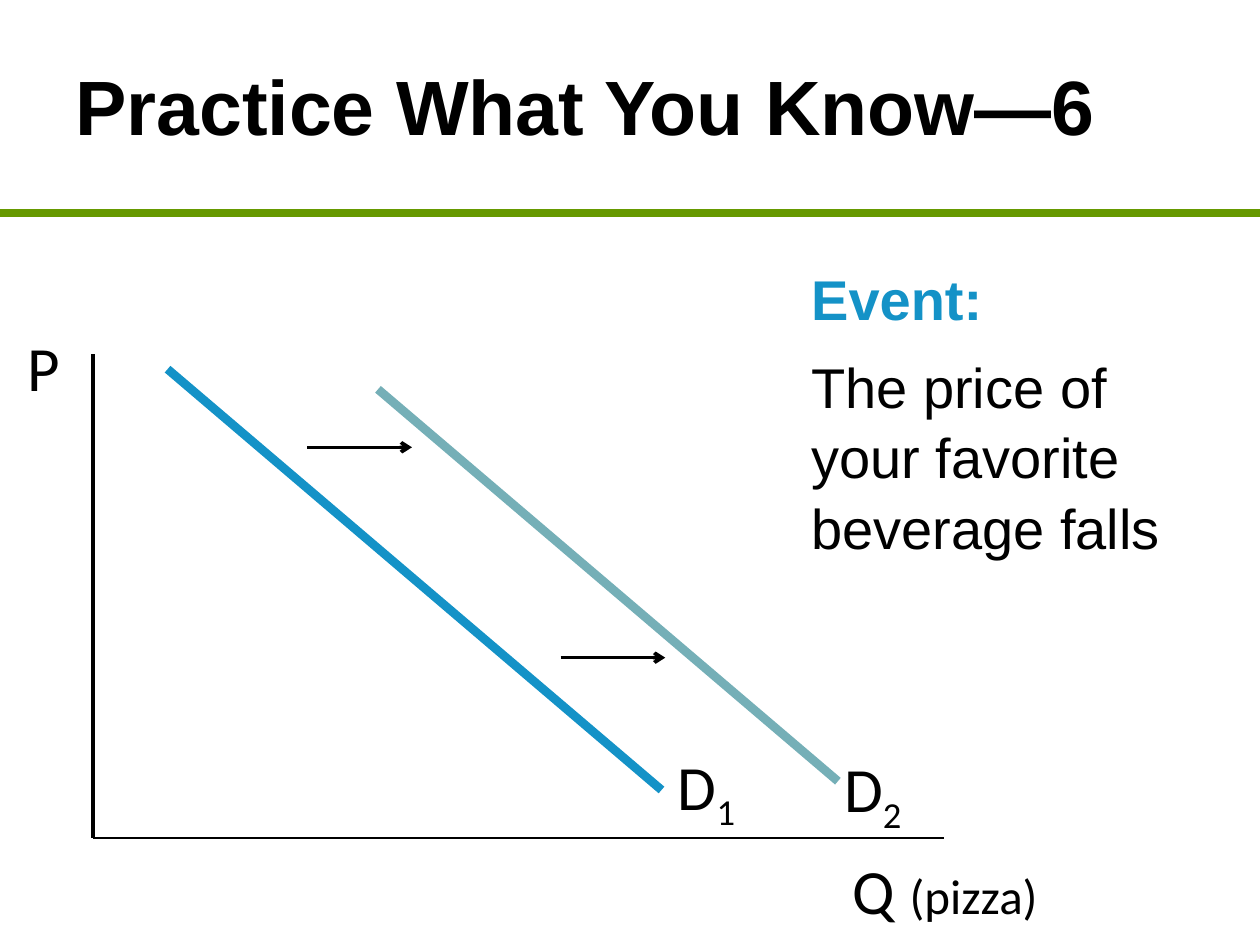
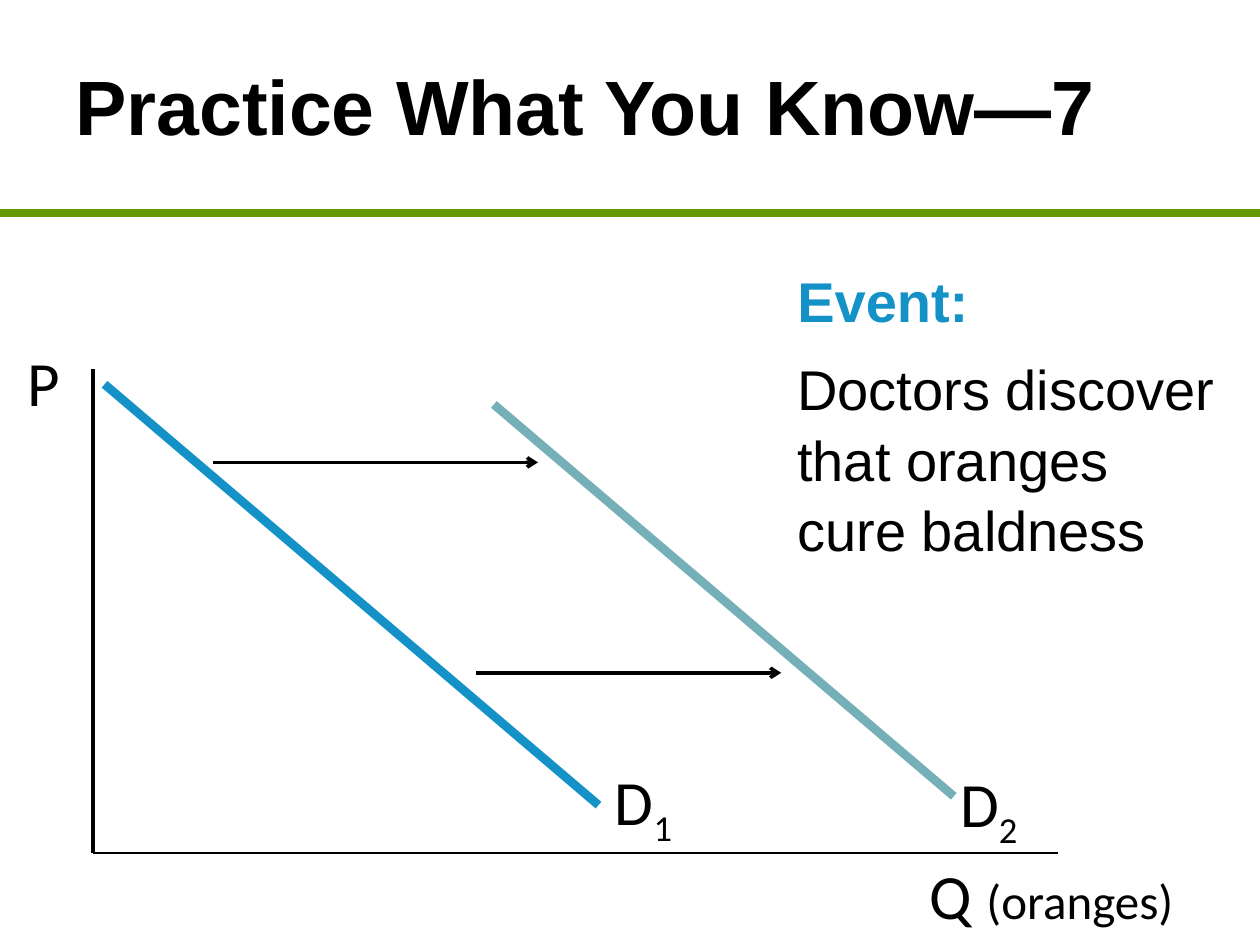
from pptx import Presentation
from pptx import util as u
from pptx.dml.color import RGBColor
from pptx.enum import shapes, text
from pptx.oxml.ns import qn
from lxml import etree

COLORS = {"ink": "000000", "band": "669900", "first": "1492C7", "second": "75AFB7"}

deck = Presentation()
deck.slide_width, deck.slide_height = u.Inches(10), u.Inches(7.5)
COLUMN, ROW = deck.slide_width / 100, deck.slide_height / 75
AXIS_X = 7.4
AXIS_HEIGHT = 38.4


def add_line(page, start, end, color, width, arrow=False):
    line = page.shapes.add_connector(
        shapes.MSO_CONNECTOR.STRAIGHT,
        round(start[0] * COLUMN), round(start[1] * ROW),
        round(end[0] * COLUMN), round(end[1] * ROW))
    line.line.color.rgb = RGBColor.from_string(COLORS[color])
    line.line.width = u.Pt(width)
    if arrow:
        etree.SubElement(line.line._get_or_add_ln(), qn("a:tailEnd"), type="arrow")
    etree.SubElement(line._element.spPr, qn("a:effectLst"))


def add_text(page, left, top, width, height, paragraphs, font="Calibri",
             inset=(0.05, 0.02), after=10, spacing=1.0, anchor=text.MSO_ANCHOR.TOP):
    box = page.shapes.add_textbox(round(left * COLUMN), round(top * ROW),
                                  round(width * COLUMN), round(height * ROW))
    frame = box.text_frame
    frame.word_wrap = True
    frame.vertical_anchor = anchor
    frame.margin_left = frame.margin_right = u.Inches(inset[0])
    frame.margin_top = frame.margin_bottom = u.Inches(inset[1])
    for index, runs in enumerate(paragraphs):
        para = frame.add_paragraph() if index else frame.paragraphs[0]
        para.space_after = u.Pt(after)
        para.line_spacing = spacing
        for words, size, color, bold, baseline in runs:
            span = para.add_run()
            span.text = words
            span.font.name = font
            span.font.size = u.Pt(size)
            span.font.bold = bold
            span.font.color.rgb = RGBColor.from_string(COLORS[color])
            if baseline:
                span.font._element.set("baseline", str(baseline))


practices = [
    {"number": 6, "good": "pizza", "event": "The price of your favorite beverage falls",
     "axis_top": 28.1, "axis_end": 74.9, "quantity": (67.2, 67.4),
     "event_box": (63.4, 20.2, 32.3, 25), "curves": (13.3, 30),
     "arrows": [(24.4, 32.7, 7.4), (44.5, 52.8, 24.1)]},
    {"number": 7, "good": "oranges", "event": "Doctors discover that oranges cure baldness",
     "axis_top": 29.3, "axis_end": 84, "quantity": (73.3, 67.8),
     "event_box": (62.3, 20.4, 35.6, 30), "curves": (8.3, 39.2),
     "arrows": [(16.9, 42.7, 7.4), (37.8, 62, 24.1)]},
]
curve_styles = [
    {"color": "first", "drop": 1.2, "run": 39.2, "fall": 33.4, "label": (0.8, -3.6)},
    {"color": "second", "drop": 2.8, "run": 36.5, "fall": 31.1, "label": (0, -2.7)},
]

for practice in practices:
    page = deck.slides.add_slide(deck.slide_layouts[6])
    add_line(page, (0, 16.9), (100, 16.9), "band", 4.5)
    add_text(page, 5, 0, 90, 16.7,
             [[(f"Practice What You Know—{practice['number']}", 44, "ink", True, 0)]],
             font="Arial", inset=(0.1, 0.05), after=0, anchor=text.MSO_ANCHOR.MIDDLE)

    axis_top = practice["axis_top"]
    axis_bottom = axis_top + AXIS_HEIGHT
    add_line(page, (AXIS_X, axis_top), (AXIS_X, axis_bottom), "ink", 2)
    add_line(page, (practice["axis_end"], axis_bottom), (AXIS_X, axis_bottom), "ink", 1.5)
    add_text(page, 1.7, axis_top - 2.2, 6.1, 4.4, [[("P", 36, "ink", False, 0)]])
    add_text(page, *practice["quantity"], 26, 4.7,
             [[("Q ", 36, "ink", False, 0), (f"({practice['good']})", 28, "ink", False, 0)]])

    for number, (left, style) in enumerate(zip(practice["curves"], curve_styles), 1):
        top = axis_top + style["drop"]
        right, bottom = left + style["run"], top + style["fall"]
        add_line(page, (left, top), (right, bottom), style["color"], 5)
        shift_x, shift_y = style["label"]
        add_text(page, right + shift_x, bottom + shift_y, 10, 6.9,
                 [[("D", 36, "ink", False, 0), (str(number), 36, "ink", False, -25000)]])

    for left, right, drop in practice["arrows"]:
        add_line(page, (left, axis_top + drop), (right, axis_top + drop), "ink", 2, arrow=True)

    add_text(page, *practice["event_box"],
             [[("Event:", 32, "first", True, 0)], [(practice["event"], 32, "ink", False, 0)]],
             font="Arial", inset=(0.1, 0.05), spacing=1.05)

deck.save("out.pptx")
